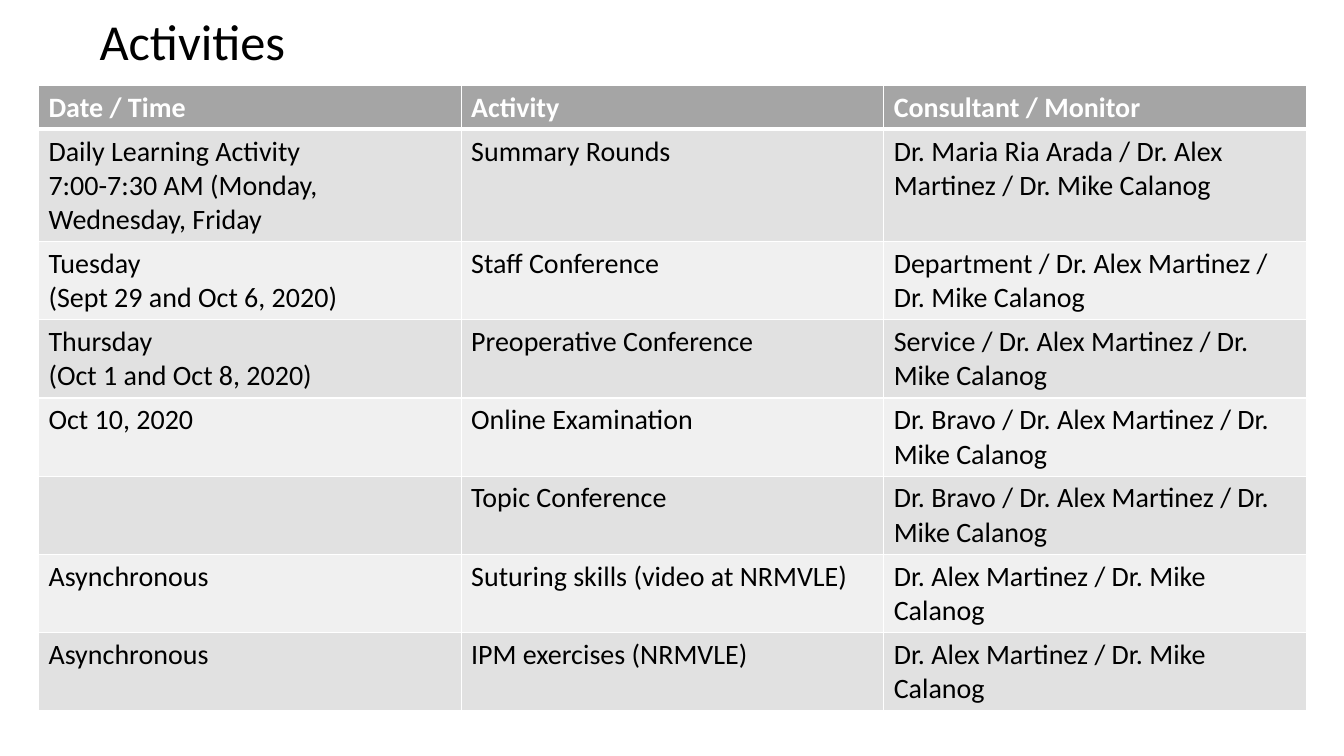
from lxml.etree import SubElement
from pptx import Presentation
from pptx.dml.color import RGBColor
from pptx.enum.text import MSO_ANCHOR
from pptx.oxml.ns import qn
from pptx.util import Cm, Pt

CONSULTANTS = "Dr. Alex Martinez / Dr. Mike Calanog"
HEADER = ("Date / Time", "Activity", "Consultant / Monitor")
ACTIVITIES = [
    ("Daily Learning Activity\n7:00-7:30 AM (Monday, Wednesday, Friday",
     "Summary Rounds", f"Dr. Maria Ria Arada / {CONSULTANTS}"),
    ("Tuesday\n(Sept 29 and Oct 6, 2020)", "Staff Conference",
     f"Department / {CONSULTANTS}"),
    ("Thursday\n(Oct 1 and Oct 8, 2020)", "Preoperative Conference",
     f"Service / {CONSULTANTS}"),
    ("Oct 10, 2020", "Online Examination", f"Dr. Bravo / {CONSULTANTS}"),
    ("", "Topic Conference", f"Dr. Bravo / {CONSULTANTS}"),
    ("Asynchronous", "Suturing skills (video at NRMVLE)", CONSULTANTS),
    ("Asynchronous", "IPM exercises (NRMVLE)", CONSULTANTS),
]
LINES_PER_ROW = (1, 3, 2, 2, 2, 2, 2, 2)
LINE_HEIGHT, ROW_PADDING = 0.86, 0.25

TITLE_FORMAT = {"name": "Calibri", "size": Pt(36), "bold": False}
HEADER_FORMAT = {"name": "Calibri", "size": Pt(20), "bold": True}
BODY_FORMAT = {**HEADER_FORMAT, "bold": False}


def rgb(value):
    return RGBColor.from_string(value)


def write(frame, text, font_format, color):
    frame.text = text
    for paragraph in frame.paragraphs:
        for name, value in font_format.items():
            setattr(paragraph.font, name, value)
        paragraph.font.color.rgb = rgb(color)


def add_border(cell, side, width, color="FFFFFF"):
    line = SubElement(cell._tc.get_or_add_tcPr(), qn(f"a:ln{side}"), w=str(Pt(width)))
    fill = SubElement(line, qn("a:solidFill"))
    SubElement(fill, qn("a:srgbClr"), val=color)


def add_title(slide, left, top, width, height):
    box = slide.shapes.add_textbox(Cm(left), Cm(top), Cm(width), Cm(height))
    frame = box.text_frame
    frame.word_wrap = True
    frame.vertical_anchor = MSO_ANCHOR.MIDDLE
    write(frame, "Activities", TITLE_FORMAT, "000000")
    frame.paragraphs[0].line_spacing = 0.9


def add_schedule(slide, left, top, width):
    rows = [HEADER, *ACTIVITIES]
    heights = [ROW_PADDING + LINE_HEIGHT * lines for lines in LINES_PER_ROW]
    table = slide.shapes.add_table(
        len(rows), len(HEADER), Cm(left), Cm(top), Cm(width), Cm(sum(heights))).table
    for column in table.columns:
        column.width = Cm(width / len(HEADER))

    for row_index, texts in enumerate(rows):
        table.rows[row_index].height = Cm(heights[row_index])
        is_header = row_index == 0
        band = "A5A5A5" if is_header else ("F0F0F0", "E1E1E1")[row_index % 2]
        # A thick rule separates the header from the body
        borders = {"L": 1, "R": 1, "T": 3 if row_index == 1 else 1,
                   "B": 3 if is_header else 1}
        for column_index, text in enumerate(texts):
            cell = table.cell(row_index, column_index)
            for side, line_width in borders.items():
                add_border(cell, side, line_width)
            cell.fill.solid()
            cell.fill.fore_color.rgb = rgb(band)
            write(cell.text_frame, text,
                  HEADER_FORMAT if is_header else BODY_FORMAT,
                  "FFFFFF" if is_header else "000000")


def main():
    presentation = Presentation()
    presentation.slide_width, presentation.slide_height = Cm(33.87), Cm(19.05)
    slide = presentation.slides.add_slide(presentation.slide_layouts[6])
    add_title(slide, 2.26, 0.28, 29.21, 1.68)
    add_schedule(slide, 0.97, 2.15, 31.95)
    presentation.save("out.pptx")


if __name__ == "__main__":
    main()
